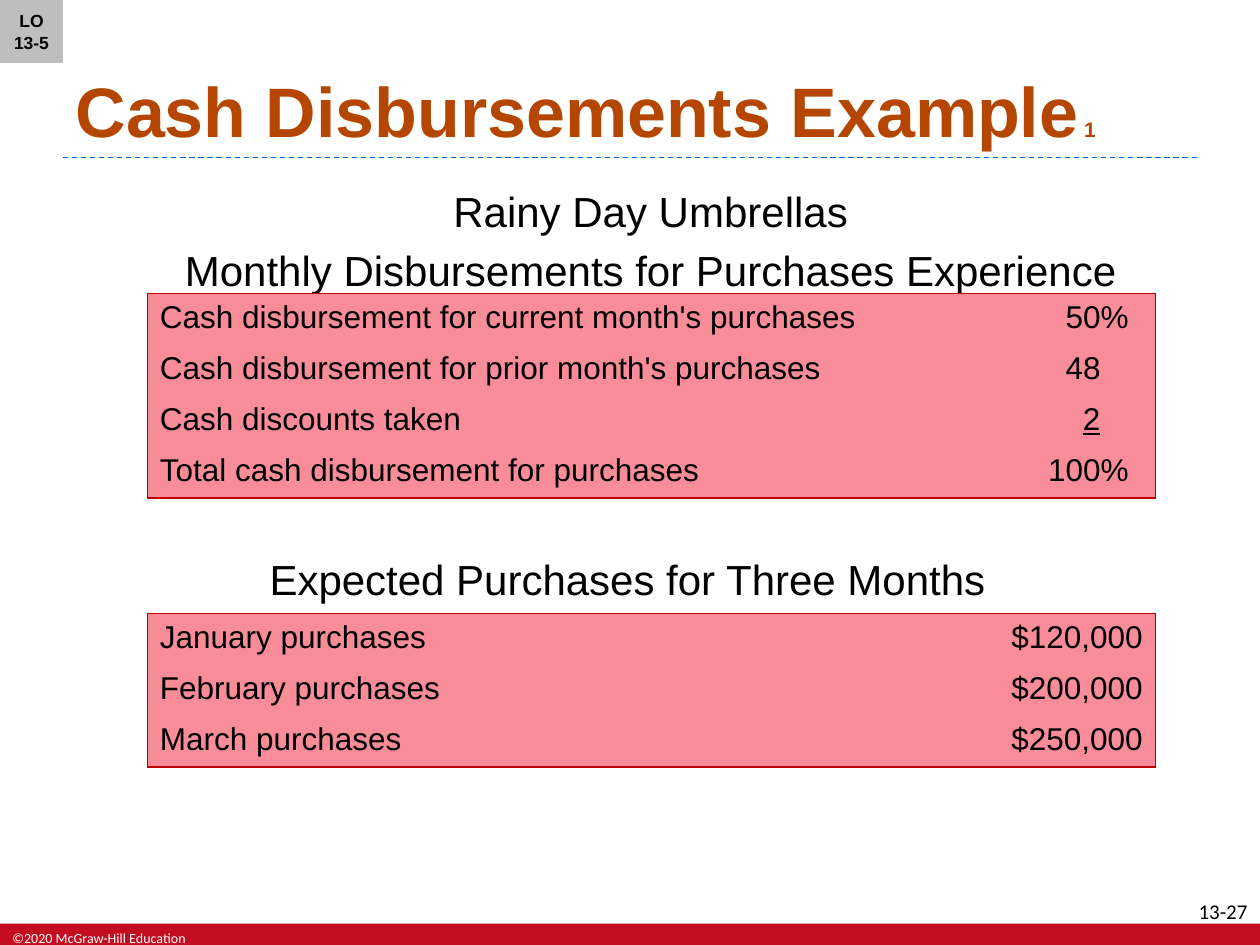
from dataclasses import dataclass

import pptx
import pptx.dml.color
import pptx.enum.dml
import pptx.enum.shapes
import pptx.enum.text
import pptx.oxml
import pptx.oxml.ns
import pptx.util
from lxml import etree
from pptx.util import Cm, Pt

ALIGN = pptx.enum.text.PP_ALIGN
ANCHOR = pptx.enum.text.MSO_ANCHOR
NO_STYLE = "{2D5ABB26-0587-4C30-8999-92F81FD0307C}"


@dataclass(frozen=True)
class Theme:
    font: str = "Arial"
    footer_font: str = "Calibri"
    text: str = "000000"
    light: str = "FFFFFF"
    title: str = "B44600"
    rule: str = "0064C8"
    band: str = "C30C20"
    tag: str = "BEBEBE"
    cell: str = "F88D99"
    border: str = "C00000"
    title_size: int = 40
    heading_size: int = 24
    table_size: int = 18
    small_size: int = 12
    tag_size: int = 10
    copyright_size: int = 8


THEME = Theme()


def rgb(value):
    return pptx.dml.color.RGBColor.from_string(value)


def add_xml(parent, tag, **attributes):
    return etree.SubElement(parent, pptx.oxml.ns.qn(tag), attributes)


def format_runs(paragraph, size, color=THEME.text, bold=False, font=THEME.font):
    for run in paragraph.runs:
        run.font.name = font
        run.font.size = Pt(size)
        run.font.bold = bold
        run.font.color.rgb = rgb(color)


def place(shape, left, top, width, height):
    shape.left, shape.top = Cm(left), Cm(top)
    shape.width, shape.height = Cm(width), Cm(height)


def fill_placeholder(shape, box, text, size, align, anchor, color=THEME.text, bold=False):
    place(shape, *box)
    frame = shape.text_frame
    frame.text = text
    frame.word_wrap = True
    frame.auto_size = pptx.enum.text.MSO_AUTO_SIZE.NONE
    frame.vertical_anchor = anchor
    for index, paragraph in enumerate(frame.paragraphs):
        properties = paragraph._p.get_or_add_pPr()
        properties.set("marL", "0")
        properties.set("indent", "0")
        add_xml(properties, "a:buNone")
        paragraph.alignment = align
        paragraph.space_before = Pt(2 if index else 0)
        paragraph.space_after = Pt(3)
        format_runs(paragraph, size, color, bold)


def add_label(slide, box, text, size, color, align=ALIGN.LEFT):
    label = slide.shapes.add_textbox(*(Cm(length) for length in box))
    label.text_frame.text = text
    label.text_frame.word_wrap = True
    paragraph = label.text_frame.paragraphs[0]
    paragraph.alignment = align
    format_runs(paragraph, size, color, font=THEME.footer_font)


def add_footer(slide):
    band = slide.shapes.add_shape(pptx.enum.shapes.MSO_SHAPE.RECTANGLE,
                                  Cm(0), Cm(18.62), Cm(25.4), Cm(0.43))
    band.shadow.inherit = False
    band.fill.solid()
    band.fill.fore_color.rgb = rgb(THEME.band)
    band.line.fill.background()
    add_label(slide, (0, 18.62, 4.06, 0.43), "©2020 McGraw-Hill Education",
              THEME.copyright_size, THEME.light)
    add_label(slide, (23.62, 17.98, 1.78, 0.51), "13-27",
              THEME.small_size, THEME.text, ALIGN.RIGHT)


def add_title_rule(slide):
    rule = slide.shapes.add_connector(pptx.enum.shapes.MSO_CONNECTOR.STRAIGHT,
                                      Cm(1.27), Cm(3.17), Cm(24.13), Cm(3.17))
    rule.line.color.rgb = rgb(THEME.rule)
    rule.line.width = Pt(0.75)
    rule.line.dash_style = pptx.enum.dml.MSO_LINE.DASH
    add_xml(rule._element.spPr, "a:effectLst")


def add_border(cell, side):
    line = add_xml(cell._tc.get_or_add_tcPr(), f"a:ln{side}", w=str(Pt(1)))
    add_xml(add_xml(line, "a:solidFill"), "a:srgbClr", val=THEME.border)


def add_boxed_table(slide, top, widths, rows):
    """A filled table with a frame around its outside only."""
    row_height = 1.03
    frame = slide.shapes.add_table(len(rows), len(widths), Cm(2.97), Cm(top),
                                   Cm(sum(widths)), Cm(row_height * len(rows)))
    table = frame.table
    table.first_row = table.horz_banding = False
    table._tbl.tblPr.find(pptx.oxml.ns.qn("a:tableStyleId")).text = NO_STYLE
    for column, width in zip(table.columns, widths):
        column.width = Cm(width)
    for r, row in enumerate(rows):
        table.rows[r].height = Cm(row_height)
        for c, text in enumerate(row):
            cell = table.cell(r, c)
            outer = {"L": c == 0, "R": c == len(widths) - 1,
                     "T": r == 0, "B": r == len(rows) - 1}
            for side in (side for side, is_outer in outer.items() if is_outer):
                add_border(cell, side)
            cell.fill.solid()
            cell.fill.fore_color.rgb = rgb(THEME.cell)
            cell.text_frame.text = text
            format_runs(cell.text_frame.paragraphs[0], THEME.table_size)
    return table


def align_by_digit(cell):
    """Tab stops one digit apart line up the units of the percentages."""
    digit = 0.35
    cell.margin_left = Cm(0.79)
    cell.margin_right = Cm(0)
    stops = add_xml(cell.text_frame.paragraphs[0]._p.get_or_add_pPr(), "a:tabLst")
    for place_number in (1, 2):
        add_xml(stops, "a:tab", pos=str(Cm(digit * place_number)), algn="l")


def main():
    presentation = pptx.Presentation()
    presentation.slide_width, presentation.slide_height = Cm(25.4), Cm(19.05)
    slide = presentation.slides.add_slide(presentation.slide_layouts[4])
    title, experience, objective, expected, unused = slide.placeholders
    unused._element.getparent().remove(unused._element)

    # Footer band and title rule
    add_footer(slide)
    add_title_rule(slide)

    # Title with its small sequence number
    fill_placeholder(title, (1.27, 0.13, 22.86, 3.05), "Cash Disbursements Example",
                     THEME.title_size, ALIGN.LEFT, ANCHOR.BOTTOM, THEME.title, True)
    title_line = title.text_frame.paragraphs[0]
    title_line.space_after = Pt(0)
    title_line.add_run().text = " 1"
    format_runs(title_line, THEME.title_size, THEME.title, True)
    title_line.runs[-1].font.size = Pt(THEME.small_size)

    # Disbursement percentages
    fill_placeholder(experience, (3.17, 3.61, 19.89, 2.34),
                     "Rainy Day Umbrellas\nMonthly Disbursements for Purchases Experience",
                     THEME.heading_size, ALIGN.CENTER, ANCHOR.TOP)
    percentages = add_boxed_table(slide, 5.92, (17.37, 2.95), [
        ("Cash disbursement for current month's purchases", "\t50%"),
        ("Cash disbursement for prior month's purchases", "\t48"),
        ("Cash discounts taken", "\t\t2"),
        ("Total cash disbursement for purchases", "100%"),
    ])
    for row in range(4):
        align_by_digit(percentages.cell(row, 1))
    for run in percentages.cell(2, 1).text_frame.paragraphs[0].runs:
        run.font.underline = True

    # Expected purchases
    fill_placeholder(expected, (5.18, 10.95, 15.77, 1.42), "Expected Purchases for Three Months",
                     THEME.heading_size, ALIGN.LEFT, ANCHOR.MIDDLE)
    purchases = add_boxed_table(slide, 12.37, (14.22, 6.1), [
        ("January purchases", "$120,000"),
        ("February purchases", "$200,000"),
        ("March purchases", "$250,000"),
    ])
    for row in range(3):
        purchases.cell(row, 1).text_frame.paragraphs[0].alignment = ALIGN.RIGHT

    # Learning objective tag
    fill_placeholder(objective, (0, 0, 1.27, 1.27), "LO 13-5",
                     THEME.tag_size, ALIGN.CENTER, ANCHOR.MIDDLE, bold=True)
    objective.fill.solid()
    objective.fill.fore_color.rgb = rgb(THEME.tag)

    presentation.save("out.pptx")


if __name__ == "__main__":
    main()
